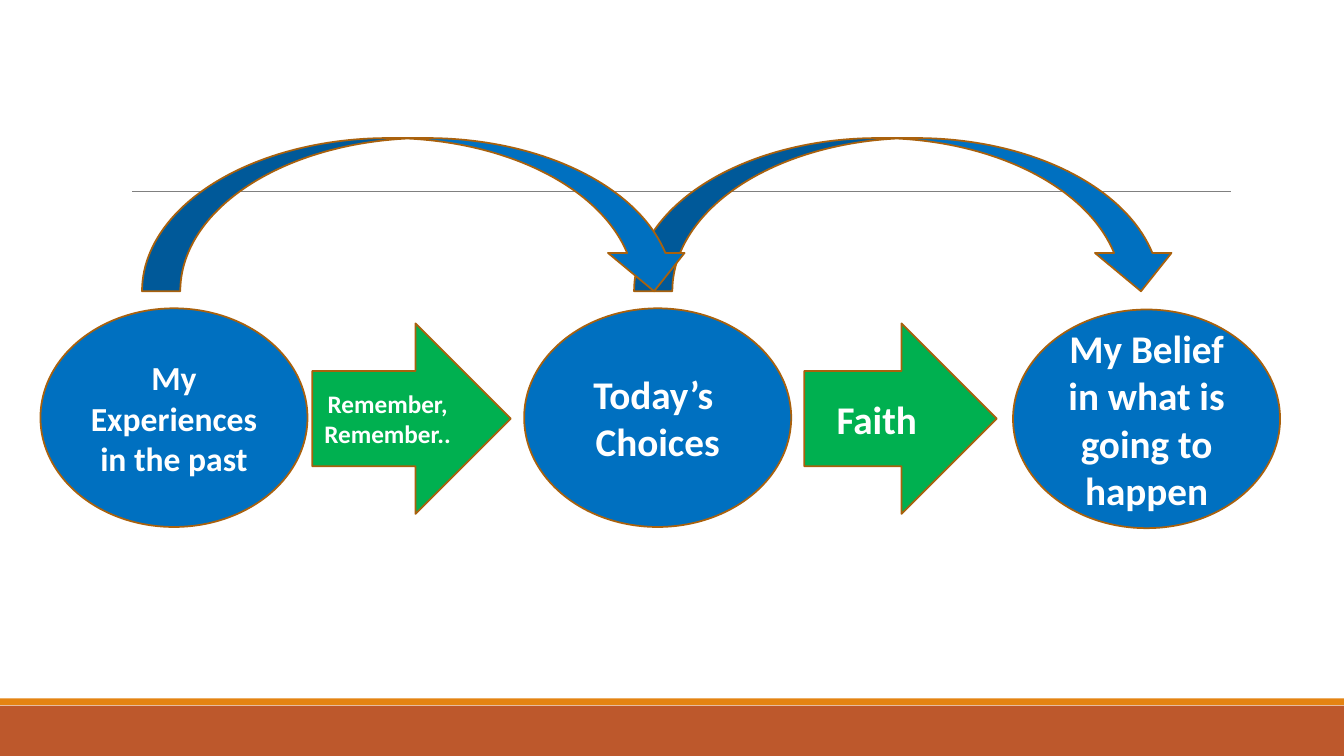
from lxml.etree import SubElement
from pptx import Presentation
from pptx.dml.color import RGBColor
from pptx.enum.shapes import MSO_CONNECTOR, MSO_SHAPE
from pptx.enum.text import MSO_ANCHOR, PP_ALIGN
from pptx.oxml.ns import qn
from pptx.util import Cm, Pt

COLORS = {
    "footer": "BD582C",
    "stripe": "E48312",
    "rule": "808080",
    "blue": "0070C0",
    "green": "00B050",
    "outline": "A9610D",
    "text": "FFFFFF",
}
FONT = "Calibri"
SLIDE_WIDTH, SLIDE_HEIGHT = 33.87, 19.05


def rgb(name):
    return RGBColor.from_string(COLORS[name])


def add_filled(slide, kind, left, top, width, height, fill, outline=None):
    shape = slide.shapes.add_shape(kind, Cm(left), Cm(top), Cm(width), Cm(height))
    shape.shadow.inherit = False
    shape.fill.solid()
    shape.fill.fore_color.rgb = rgb(fill)
    if outline:
        shape.line.color.rgb = rgb(outline)
        shape.line.width = Pt(1.25)
    else:
        shape.line.fill.background()
    return shape


def add_label(shape, text, size):
    frame = shape.text_frame
    frame.word_wrap = True
    frame.vertical_anchor = MSO_ANCHOR.MIDDLE
    frame.text = text
    for paragraph in frame.paragraphs:
        paragraph.alignment = PP_ALIGN.CENTER
        paragraph.font.name = FONT
        paragraph.font.size = Pt(size)
        paragraph.font.bold = True
        paragraph.font.color.rgb = rgb("text")


def add_rule(slide, left, right, y):
    rule = slide.shapes.add_connector(
        MSO_CONNECTOR.STRAIGHT, Cm(left), Cm(y), Cm(right), Cm(y))
    rule.line.color.rgb = rgb("rule")
    rule.line.width = Pt(0.5)
    SubElement(rule.element.spPr, qn("a:effectLst"))


def add_stage(slide, left, top, text, size):
    stage = add_filled(slide, MSO_SHAPE.OVAL, left, top, 6.73, 5.51, "blue", "outline")
    add_label(stage, text, size)


def add_arc(slide, left, width):
    add_filled(slide, MSO_SHAPE.CURVED_DOWN_ARROW, left, 3.48, width, 3.86,
               "blue", "outline")


def add_step(slide, left, width, text, size):
    step = add_filled(slide, MSO_SHAPE.RIGHT_ARROW, left, 8.15, width, 4.8,
                      "green", "outline")
    add_label(step, text, size)


def main():
    presentation = Presentation()
    presentation.slide_width = Cm(SLIDE_WIDTH)
    presentation.slide_height = Cm(SLIDE_HEIGHT)
    slide = presentation.slides.add_slide(presentation.slide_layouts[6])

    add_filled(slide, MSO_SHAPE.RECTANGLE, 0, 17.78, SLIDE_WIDTH, 1.27, "footer")
    add_filled(slide, MSO_SHAPE.RECTANGLE, 0, 17.6, SLIDE_WIDTH, 0.17, "stripe")
    add_rule(slide, 3.33, 31.01, 4.83)

    add_stage(slide, 13.21, 7.77, "Today’s \nChoices", 28)
    add_arc(slide, 15.98, 13.74)
    add_stage(slide, 25.53, 7.8, "My Belief in what is going to happen", 28)
    add_stage(slide, 1.02, 7.77, "My Experiences in the past", 24)
    add_arc(slide, 3.58, 13.87)
    add_step(slide, 20.27, 4.85, "Faith", 28)
    add_step(slide, 7.87, 5, "Remember, Remember..", 18)

    presentation.save("out.pptx")


if __name__ == "__main__":
    main()
